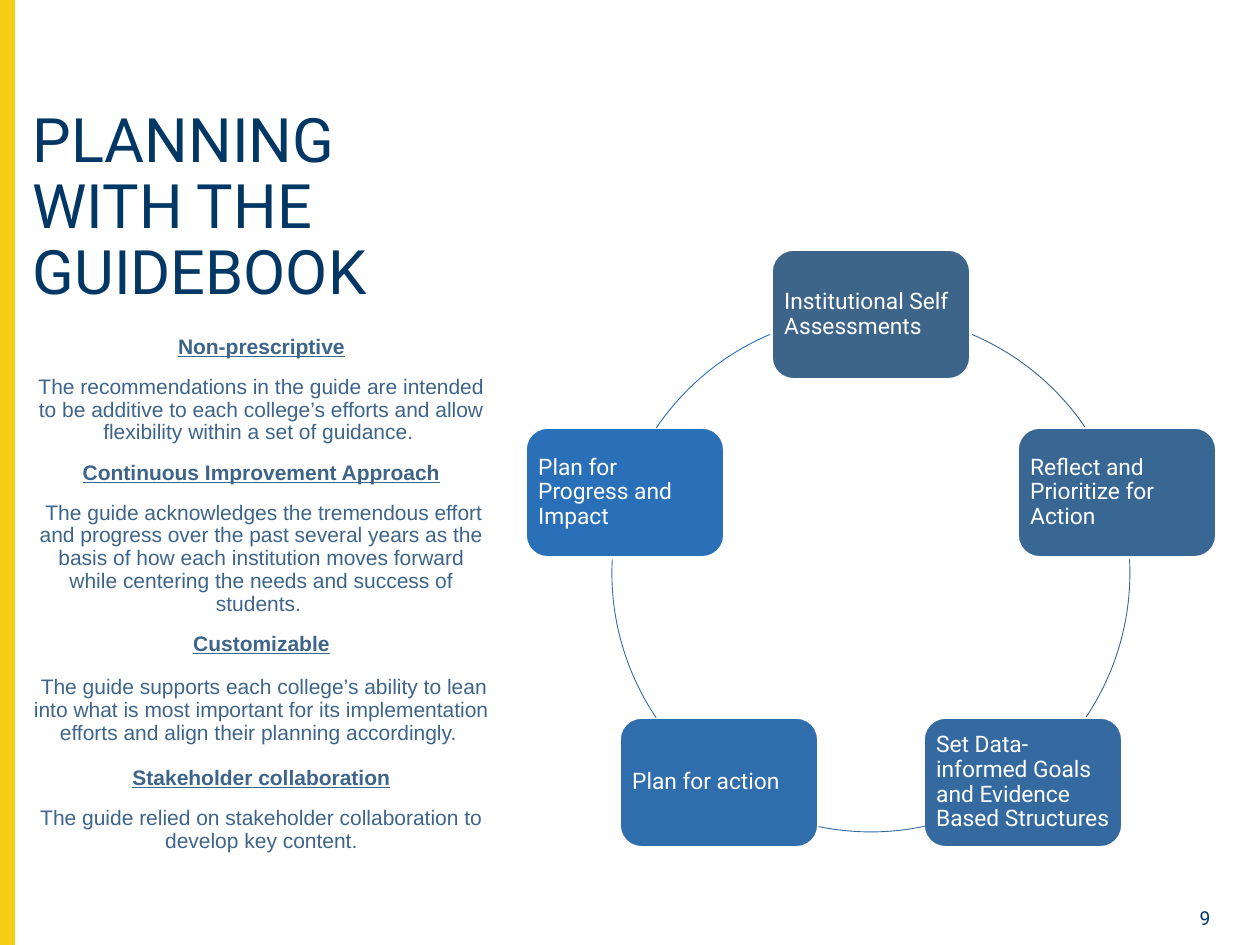
from math import cos, sin, radians
from pptx import Presentation
from pptx.util import Pt
from pptx.dml.color import RGBColor
from pptx.enum.shapes import MSO_SHAPE as Shape
from pptx.enum.text import MSO_ANCHOR as Anchor, MSO_AUTO_SIZE as Auto, PP_ALIGN as Align
from lxml.etree import SubElement

PX = 914400 // 126
NAVY, SLATE, GOLD, WHITE = "003764", "3D6489", "F4CE12", "FFFFFF"


def tint(color):
    return RGBColor.from_string(color)


def write(para, text, align, **font):
    para.alignment = align
    para.line_spacing = 0.9
    run = para.add_run()
    run.text = text
    run.font.color.rgb = tint(font.pop("color"))
    for key, value in font.items():
        setattr(run.font, key, value)


deck = Presentation()
deck.slide_width, deck.slide_height = 1260 * PX, 945 * PX
slide = deck.slides.add_slide(deck.slide_layouts[1])
shapes = slide.shapes

# Side bar
bar = shapes.add_shape(Shape.RECTANGLE, 0, 0, 14 * PX, 945 * PX)
bar.shadow.inherit = False
bar.fill.solid()
bar.fill.fore_color.rgb = bar.line.color.rgb = tint(GOLD)
bar.line.width = Pt(1)

# Title and body placeholders
title, body = shapes.title, slide.placeholders[1]
for box, top, high, anchor in ((title, 120, 194, Anchor.BOTTOM), (body, 330, 481, Anchor.TOP)):
    box.left, box.top, box.width, box.height = 20 * PX, top * PX, 483 * PX, high * PX
    box.text_frame.auto_size = Auto.NONE
    box.text_frame.word_wrap = True
    box.text_frame.vertical_anchor = anchor
write(title.text_frame.paragraphs[0], "PLANNING WITH THE GUIDEBOOK", Align.LEFT,
      size=Pt(35), name="Roboto", color=NAVY)

# Principles: heading, space before it, text, space before it
points = [
    ("Non-prescriptive", 0,
     "The recommendations in the guide are intended to be additive to each college’s "
     "efforts and allow flexibility within a set of guidance. ", 10),
    ("Continuous Improvement Approach", 10,
     " The guide acknowledges the tremendous effort and progress over the past several "
     "years as the basis of how each institution moves forward while centering the needs "
     "and success of students. ", 10),
    ("Customizable", 10,
     " The guide supports each college’s ability to lean into what is most important for "
     "its implementation efforts and align their planning accordingly. ", 12),
    ("Stakeholder collaboration", 13,
     "The guide relied on stakeholder collaboration to develop key content.", 10),
]
frame = body.text_frame
for head, above, text, gap in points:
    for line, space, bold in ((head, above, True), (text, gap, False)):
        para = frame.add_paragraph() if frame.text else frame.paragraphs[0]
        props = para._p.get_or_add_pPr()
        props.set("marL", "0")
        props.set("indent", "0")
        SubElement(props, "{http://schemas.openxmlformats.org/drawingml/2006/main}buNone")
        para.space_before = Pt(space)
        write(para, line, Align.CENTER, size=Pt(12), name="Arial",
              color=SLATE, bold=bold, underline=bold)

# Cycle: box text, colour, start and end angle of the arc after it
midx, midy, rad = 871, 573, 259
wide, high = 198, 129
steps = [
    ("Institutional Self Assessments", SLATE, 293, 326),
    ("Reflect and Prioritize for Action", "396794", 357, 34),
    ("Set Data-informed Goals and Evidence Based Structures", "346AA0", 78, 102),
    ("Plan for action", "2F6DAC", 146, 183),
    ("Plan for Progress and Impact", "2A70B8", 214, 247),
]
for i, (text, color, start, end) in enumerate(steps):
    turn = radians(72 * i - 90)
    left = round(midx + rad * cos(turn) - wide / 2)
    top = round(midy + rad * sin(turn) - high / 2)
    box = shapes.add_shape(Shape.ROUNDED_RECTANGLE, left * PX, top * PX, wide * PX, high * PX)
    box.shadow.inherit = False
    box.fill.solid()
    box.fill.fore_color.rgb = tint(color)
    box.line.color.rgb = tint(WHITE)
    box.line.width = Pt(1)
    frame = box.text_frame
    frame.word_wrap = True
    frame.vertical_anchor = Anchor.MIDDLE
    for side in ("left", "top", "right", "bottom"):
        setattr(frame, "margin_" + side, 6 * PX)
    write(frame.paragraphs[0], text, Align.LEFT, size=Pt(13), name="Roboto", color=WHITE)

    arc = shapes.add_shape(Shape.ARC, (midx - rad) * PX, (midy - rad) * PX, 2 * rad * PX, 2 * rad * PX)
    arc.shadow.inherit = False
    arc.fill.background()
    for k, angle in enumerate((start, end)):
        arc.adjustments[k] = angle * 0.6  # 60000 units a degree, scaled by 100000
    arc.line.color.rgb = tint(color)
    arc.line.width = Pt(0.5)

# Page number
page = shapes.add_textbox(1160 * PX, 903 * PX, 63 * PX, 26 * PX)
page.text_frame.word_wrap = True
write(page.text_frame.paragraphs[0], "9", Align.RIGHT, size=Pt(11), name="Roboto", color=NAVY)

deck.save("out.pptx")
